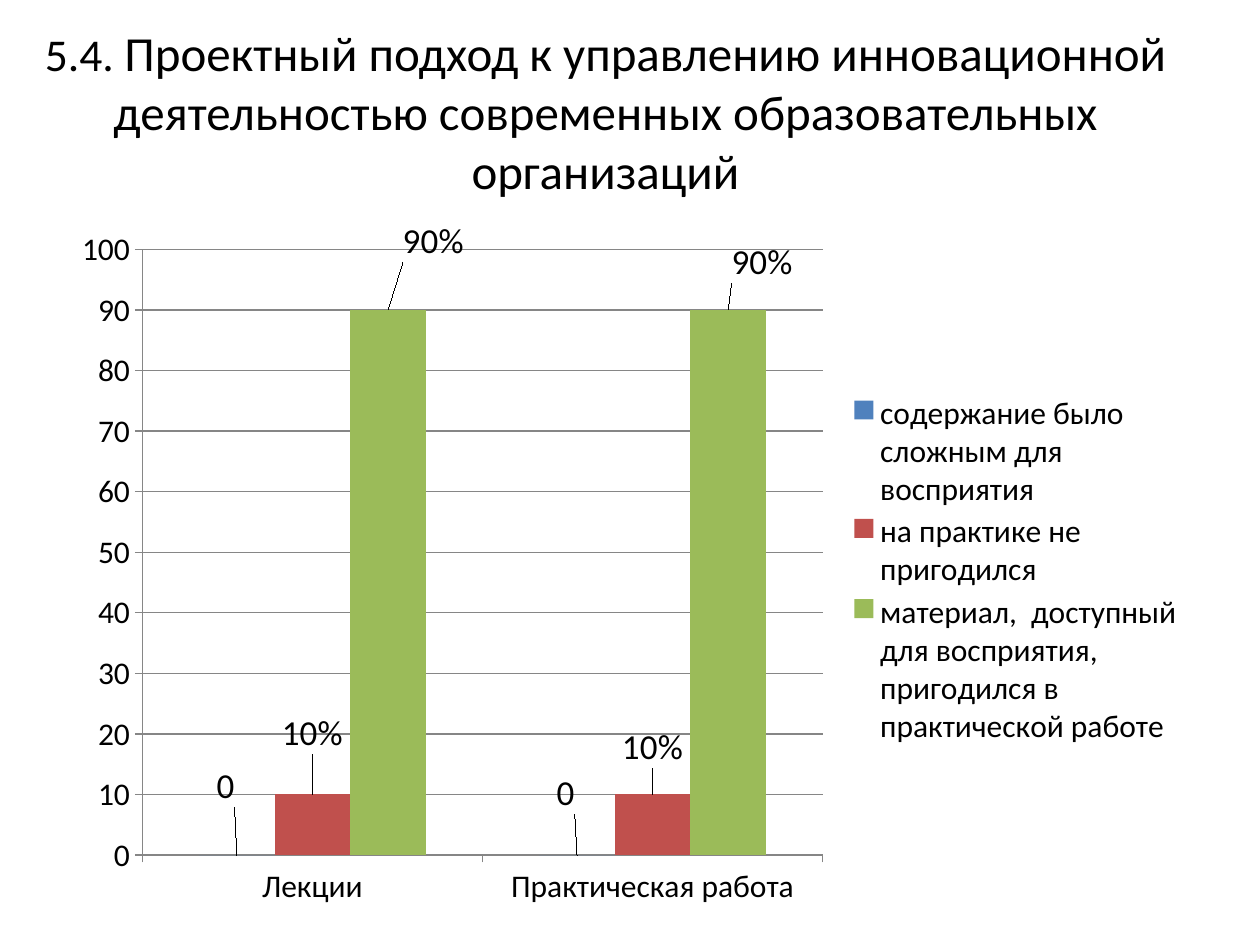
from dataclasses import dataclass

from lxml import etree
from pptx import Presentation
from pptx.chart.data import CategoryChartData
from pptx.dml.color import RGBColor
from pptx.enum import chart as ch, text
from pptx.oxml import ns
from pptx.util import Inches, Pt


@dataclass(frozen=True)
class Theme:
    font: str = "Calibri"
    ink: str = "000000"
    grid: str = "868686"
    number_size: int = 26
    title_size: int = 28
    chart_size: int = 18
    label_size: int = 20


THEME = Theme()

TITLE = (
    ("5.4. ", THEME.number_size),
    ("Проектный подход к управлению инновационной деятельностью "
     "современных образовательных организаций", THEME.title_size),
)
CATEGORIES = ("Лекции", "Практическая работа")
# Answer, values, colour, label suffix, label shifts as shares of the chart
ANSWERS = (
    ("содержание было сложным для восприятия", (0, 0), "4F81BD", "",
     ((-0.01, -0.06), (-0.01, -0.05))),
    ("на практике не пригодился", (10, 10), "C0504D", "%",
     ((0, -0.05), (0, -0.03))),
    ("материал,  доступный для восприятия, пригодился в практической работе",
     (90, 90), "9BBB59", "%", ((0.04, -0.06), (0.03, -0.03))),
)


def style_font(font, size):
    font.name = THEME.font
    font.size = Pt(size)
    font.bold = False
    font.color.rgb = RGBColor.from_string(THEME.ink)


def set_layout(parent, index, **settings):
    """Give a chart part a manual layout, as shares of the chart."""
    for old in parent.findall(ns.qn("c:layout")):
        parent.remove(old)
    layout = etree.Element(ns.qn("c:layout"))
    manual = etree.SubElement(layout, ns.qn("c:manualLayout"))
    for tag, value in settings.items():
        etree.SubElement(manual, ns.qn(f"c:{tag}")).set("val", str(value))
    parent.insert(index, layout)


def add_title(slide):
    title = slide.shapes.title
    title.left, title.top = Inches(0), Inches(0.29)
    title.width, title.height = Inches(9.61), Inches(1.18)
    frame = title.text_frame
    frame.word_wrap = True
    frame.auto_size = text.MSO_AUTO_SIZE.NONE
    frame.vertical_anchor = text.MSO_ANCHOR.MIDDLE
    paragraph = frame.paragraphs[0]
    paragraph.alignment = text.PP_ALIGN.CENTER
    for words, size in TITLE:
        run = paragraph.add_run()
        run.text = words
        style_font(run.font, size)


def style_axis(axis):
    axis.major_tick_mark = ch.XL_TICK_MARK.OUTSIDE
    axis.minor_tick_mark = ch.XL_TICK_MARK.NONE
    axis.format.line.color.rgb = RGBColor.from_string(THEME.grid)
    style_font(axis.tick_labels.font, THEME.chart_size)


def label_bar(bar, value, suffix):
    label = bar.data_label
    if suffix:
        run = label.text_frame.paragraphs[0].add_run()
        run.text = f"{value}{suffix}"
        style_font(run.font, THEME.label_size)
    else:
        style_font(label.font, THEME.label_size)
    label.position = ch.XL_LABEL_POSITION.OUTSIDE_END


def style_answer(series, values, color, suffix, shifts):
    series.format.fill.solid()
    series.format.fill.fore_color.rgb = RGBColor.from_string(color)
    series.invert_if_negative = False
    labels = series.data_labels
    labels.show_value = True
    style_font(labels.font, THEME.label_size)
    for index, value in enumerate(values):
        label_bar(series.points[index], value, suffix)
    for label, (x, y) in zip(series._element.iter(ns.qn("c:dLbl")), shifts):
        set_layout(label, 1, x=x, y=y)


def add_survey_chart(slide):
    data = CategoryChartData()
    data.categories = CATEGORIES
    for name, values, *_ in ANSWERS:
        data.add_series(name, values)
    chart = slide.shapes.add_chart(
        ch.XL_CHART_TYPE.COLUMN_CLUSTERED,
        Inches(0.5), Inches(1.7), Inches(9), Inches(5.59), data).chart
    style_font(chart.font, THEME.chart_size)
    chart.has_title = False

    # Axes and gridlines
    style_axis(chart.category_axis)
    scale = chart.value_axis
    style_axis(scale)
    scale.minimum_scale, scale.maximum_scale, scale.major_unit = 0, 100, 10
    scale.has_major_gridlines = True
    scale.major_gridlines.format.line.color.rgb = RGBColor.from_string(THEME.grid)

    # Bars
    plot = chart.plots[0]
    plot.gap_width, plot.overlap = 150, 0
    plot.vary_by_categories = False
    for series, (_, *style) in zip(plot.series, ANSWERS):
        style_answer(series, *style)

    # Legend and plot area
    chart.has_legend = True
    legend = chart.legend
    legend.position = ch.XL_LEGEND_POSITION.RIGHT
    legend.include_in_layout = False
    style_font(legend.font, THEME.chart_size)
    set_layout(legend._element, 1, xMode="edge", yMode="edge",
               x=0.69, y=0.25, w=0.3, h=0.51)
    plot_area = plot._element.getparent()
    set_layout(plot_area, 0, layoutTarget="inner", xMode="edge", yMode="edge",
               x=0.07, y=0.05, w=0.6, h=0.86)


def main():
    deck = Presentation()
    deck.slide_width, deck.slide_height = Inches(10), Inches(7.5)
    slide = deck.slides.add_slide(deck.slide_layouts[5])
    add_title(slide)
    add_survey_chart(slide)
    deck.save("out.pptx")


if __name__ == "__main__":
    main()
